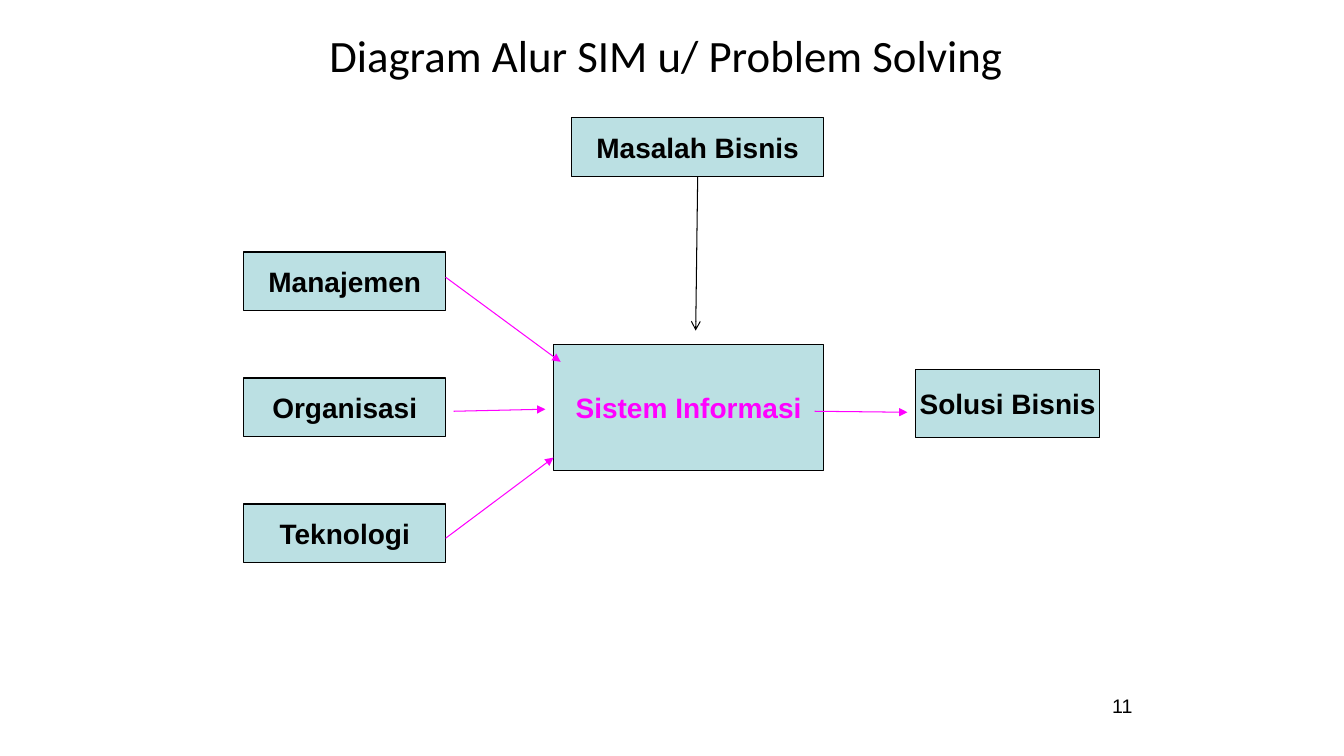
"""Build the slide with the information system flow for problem solving."""
from dataclasses import dataclass

from lxml.etree import SubElement
from pptx import Presentation
from pptx.dml.color import RGBColor
from pptx.enum.shapes import MSO_CONNECTOR, MSO_SHAPE
from pptx.enum.text import MSO_ANCHOR, PP_ALIGN
from pptx.oxml.ns import qn
from pptx.slide import Slide
from pptx.text.text import TextFrame
from pptx.util import Inches, Pt

BLACK = RGBColor(0x00, 0x00, 0x00)
MAGENTA = RGBColor(0xFF, 0x00, 0xFF)
PALE_TEAL = RGBColor(0xBB, 0xE0, 0xE3)
LINE_WIDTH = Pt(0.75)


@dataclass(frozen=True)
class Box:
    label: str
    left: float
    top: float
    width: float
    height: float = 0.58
    color: RGBColor = BLACK


@dataclass(frozen=True)
class Arrow:
    start: tuple[float, float]
    end: tuple[float, float]
    color: RGBColor = MAGENTA
    head: str = "triangle"


INPUTS = ("Manajemen", "Organisasi", "Teknologi")
BOXES = [
    Box("Masalah Bisnis", 5.67, 1.17, 2.5),
    *(Box(label, 2.42, 2.5 + 1.25 * row, 2) for row, label in enumerate(INPUTS)),
    Box("Sistem Informasi", 5.49, 3.42, 2.68, 1.25, MAGENTA),
    Box("Solusi Bisnis", 9.08, 3.67, 1.83, 0.67),
]
ARROWS = [
    Arrow((4.5, 4.08), (5.41, 4.06)),
    Arrow((8.08, 4.08), (9, 4.09)),
    Arrow((4.42, 2.75), (5.56, 3.59)),
    Arrow((4.42, 5.34), (5.49, 4.54)),
    Arrow((6.92, 1.75), (6.9, 3.28), BLACK, "arrow"),
]


def add_run(frame: TextFrame, text: str, size: float, font_name: str = "Arial",
            color: RGBColor = BLACK, bold: bool = False) -> None:
    run = frame.paragraphs[0].add_run()
    run.text = text
    run.font.size = Pt(size)
    run.font.name = font_name
    run.font.bold = bold
    run.font.color.rgb = color


def add_text_frame(slide: Slide, left: float, top: float, width: float, height: float,
                   alignment: PP_ALIGN, anchor: MSO_ANCHOR) -> TextFrame:
    shape = slide.shapes.add_textbox(Inches(left), Inches(top), Inches(width), Inches(height))
    frame = shape.text_frame
    frame.word_wrap = True
    frame.vertical_anchor = anchor
    frame.paragraphs[0].alignment = alignment
    return frame


def add_box(slide: Slide, box: Box) -> None:
    shape = slide.shapes.add_shape(MSO_SHAPE.RECTANGLE, Inches(box.left), Inches(box.top),
                                   Inches(box.width), Inches(box.height))
    shape.shadow.inherit = False
    shape.fill.solid()
    shape.fill.fore_color.rgb = PALE_TEAL
    shape.line.color.rgb = BLACK
    shape.line.width = LINE_WIDTH
    frame = shape.text_frame
    frame.word_wrap = False
    frame.vertical_anchor = MSO_ANCHOR.MIDDLE
    frame.paragraphs[0].alignment = PP_ALIGN.CENTER
    add_run(frame, box.label, 20, color=box.color, bold=True)


def add_arrow(slide: Slide, arrow: Arrow) -> None:
    points = [Inches(value) for value in (*arrow.start, *arrow.end)]
    connector = slide.shapes.add_connector(MSO_CONNECTOR.STRAIGHT, *points)
    connector.line.color.rgb = arrow.color
    connector.line.width = LINE_WIDTH
    properties = connector.element.spPr
    SubElement(properties.find(qn("a:ln")), qn("a:tailEnd"), type=arrow.head)
    SubElement(properties, qn("a:effectLst"))


def main() -> None:
    presentation = Presentation()
    presentation.slide_width = Inches(13.33)
    presentation.slide_height = Inches(7.5)
    slide = presentation.slides.add_slide(presentation.slide_layouts[6])

    number = add_text_frame(slide, 9.25, 6.83, 2.08, 0.52, PP_ALIGN.RIGHT, MSO_ANCHOR.TOP)
    add_run(number, "11", 14)
    title = add_text_frame(slide, 2.17, 0.11, 9, 0.77, PP_ALIGN.CENTER, MSO_ANCHOR.MIDDLE)
    add_run(title, "Diagram Alur SIM u/ Problem Solving", 32, "Calibri")
    add_run(title, " ", 40, "Calibri")

    for box in BOXES:
        add_box(slide, box)
    for arrow in ARROWS:
        add_arrow(slide, arrow)

    presentation.save("out.pptx")


if __name__ == "__main__":
    main()
